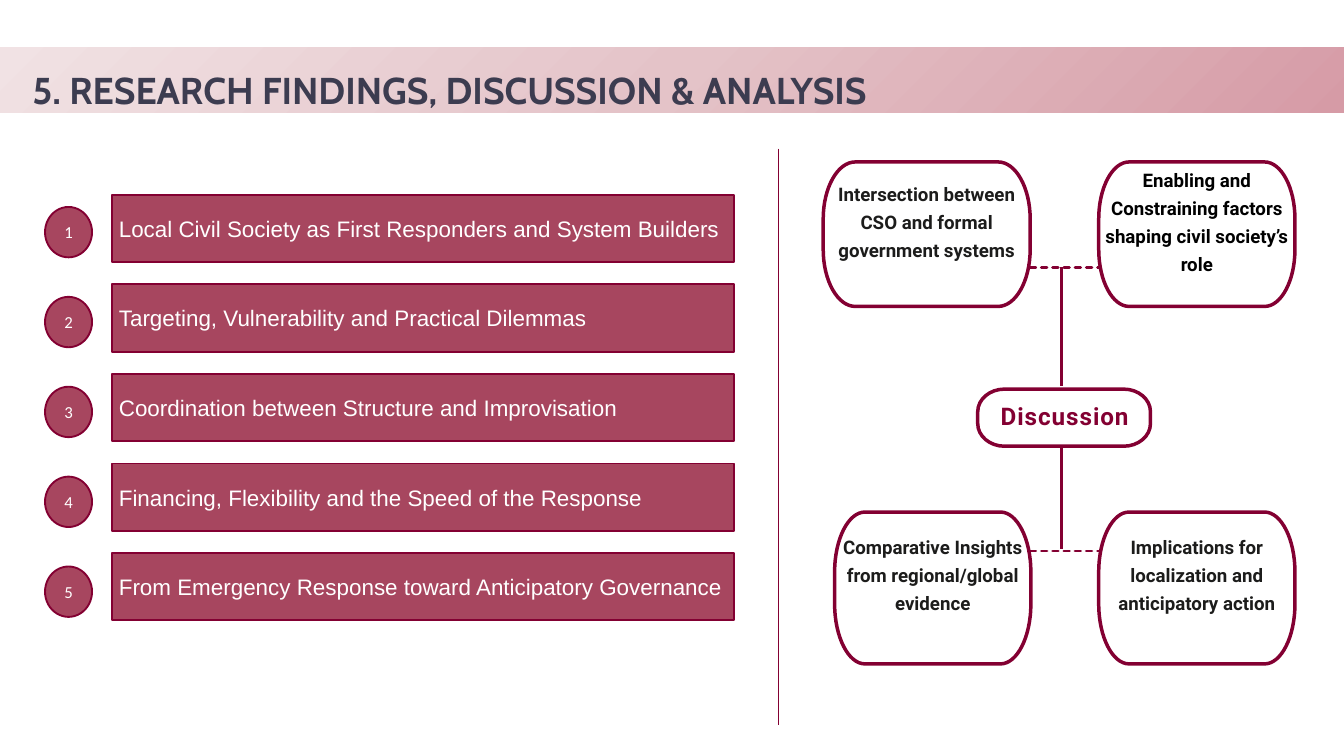
"""Build the research findings slide with five findings and a discussion map."""
from lxml import etree
from pptx import Presentation
from pptx import util as u
from pptx.dml.color import RGBColor
from pptx.enum import dml, shapes, text
from pptx.oxml.ns import qn

TITLE = "5. RESEARCH FINDINGS, DISCUSSION & ANALYSIS"
FINDINGS = [
    "Local Civil Society as First Responders and System Builders",
    "Targeting, Vulnerability and Practical Dilemmas",
    "Coordination between Structure and Improvisation",
    "Financing, Flexibility and the Speed of the Response",
    "From Emergency Response toward Anticipatory Governance",
]
HUB = ("Discussion", "wine", (14.55, 5.79, 2.57, 0.85), (14.56, 5.7, 2.57, 0.93))
ENABLING = ("Enabling and Constraining factors shaping civil society’s role", "black",
            (16.35, 2.41, 2.92, 2.15), (16.35, 1.97, 2.92, 2.59))
INTERSECTION = ("Intersection between CSO and formal government systems", "ink",
                (12.25, 2.41, 3.08, 2.15), (12.25, 1.97, 3.08, 2.59))
IMPLICATIONS = ("Implications for localization and anticipatory action", "ink",
                (16.35, 7.62, 2.92, 2.26), (16.35, 7.15, 2.92, 2.72))
COMPARATIVE = ("Comparative Insights from regional/global evidence", "ink",
               (12.42, 7.62, 2.92, 2.26), (12.42, 7.15, 2.92, 2.72))
DIVIDER = ((11.58, 2.21), (11.58, 10.79), 0.75, False)
TOP_LINK = ((15.33, 3.98), (16.35, 3.98), 3, True)
TOP_STEM = ((15.8, 3.98), (15.8, 5.75), 3, False)
LOW_LINK = ((15.33, 8.2), (16.35, 8.2), 3, True)
LOW_STEM = ((15.8, 6.64), (15.8, 8.17), 3, False)
THEME = {
    "color": {"wine": "830032", "rose": "A7465F", "white": "FFFFFF", "black": "000000", "ink": "1C1C1B",
              "title": "3C3C50"},
    "band": [(0, "D69BA6"), (50, "E4C3C8"), (100, "F1E2E4")],
    "type": {
        "title": {"name": "Cabin", "size": u.Pt(40), "bold": True},
        "finding": {"name": "Arial", "size": u.Pt(24)},
        "number": {"name": "Calibri", "size": u.Pt(18)},
        "card": {"name": "Roboto", "size": u.Pt(20), "bold": True},
        "hub": {"name": "Roboto", "size": u.Pt(26), "bold": True},
    },
}
BAR_TOPS, NUMBER_TOPS = (2.9, 8.23), (3.08, 8.43)
CORNER_X, CORNER_Y, PULL = 0.155, 0.395, 0.45


def color(name):
    return RGBColor.from_string(THEME["color"][name])


def assign(target, values):
    for name, value in values.items():
        setattr(target, name, value)


def inches(values):
    return [u.Inches(value) for value in values]


def spread(ends, count):
    first, last = ends
    return [first + index * (last - first) / (count - 1) for index in range(count)]


def write(box, words, style, ink, align, spacing=None, inset=None, **frame_values):
    frame = box.text_frame
    assign(frame, {"word_wrap": True, "vertical_anchor": text.MSO_ANCHOR.MIDDLE, **frame_values})
    if inset is not None:
        assign(frame, {f"margin_{side}": u.Inches(inset) for side in ("left", "top", "right", "bottom")})
    para = frame.paragraphs[0]
    para.alignment = align
    if spacing:
        para.line_spacing = u.Pt(spacing)
    span = para.add_run()
    span.text = words
    assign(span.font, THEME["type"][style])
    span.font.color.rgb = color(ink)
    return span


def outline(shape, width):
    shape.shadow.inherit = False
    shape.line.color.rgb = color("wine")
    shape.line.width = u.Pt(width)


def add_block(parent, place):
    left, top, width, height = place
    right, bottom = left + width, top + height
    builder = parent.shapes.build_freeform(*inches((right, bottom)))
    corners = [(left, bottom), (left, top), (right, top)]
    builder.add_line_segments([inches(corner) for corner in corners], close=True)
    block = builder.convert_to_shape()
    block.shadow.inherit = False
    return block


def add_band(page):
    band = add_block(page, (0, 0.7, 20, 0.98))
    band.line.fill.background()
    band.rotation = 180
    band.fill.gradient()
    gradient = band._element.spPr.find(qn("a:gradFill"))
    for child in list(gradient):
        gradient.remove(child)
    stops = etree.SubElement(gradient, qn("a:gsLst"))
    for position, tint in THEME["band"]:
        stop = etree.SubElement(stops, qn("a:gs"), pos=str(position * 1000))
        etree.SubElement(stop, qn("a:srgbClr"), val=tint)
    route = etree.SubElement(gradient, qn("a:path"), {"path": "circle"})
    etree.SubElement(route, qn("a:fillToRect"), l="100000", t="100000")


def add_badge(page, kind, place, words, style, align):
    badge = page.shapes.add_shape(kind, *inches(place))
    badge.fill.solid()
    badge.fill.fore_color.rgb = color("rose")
    outline(badge, 2)
    write(badge, words, style, "white", align)


def round_corners(shape):
    route = next(shape._element.iter(qn("a:path")))
    width, height = int(route.get("w")), int(route.get("h"))
    for child in list(route):
        route.remove(child)
    x, y, pull_x, pull_y = CORNER_X, CORNER_Y, CORNER_X * PULL, CORNER_Y * PULL
    steps = [
        ("moveTo", [(x, 0)]),
        ("lnTo", [(1 - x, 0)]),
        ("cubicBezTo", [(1 - pull_x, 0), (1, pull_y), (1, y)]),
        ("lnTo", [(1, 1 - y)]),
        ("cubicBezTo", [(1, 1 - pull_y), (1 - pull_x, 1), (1 - x, 1)]),
        ("lnTo", [(x, 1)]),
        ("cubicBezTo", [(pull_x, 1), (0, 1 - pull_y), (0, 1 - y)]),
        ("lnTo", [(0, y)]),
        ("cubicBezTo", [(0, pull_y), (pull_x, 0), (x, 0)]),
        ("close", []),
    ]
    for name, points in steps:
        step = etree.SubElement(route, qn(f"a:{name}"))
        for across, down in points:
            etree.SubElement(step, qn("a:pt"), x=str(round(across * width)), y=str(round(down * height)))


def add_card(page, card, style="card", spacing=30):
    words, ink, frame_place, text_place = card
    group = page.shapes.add_group_shape()
    frame = add_block(group, frame_place)
    round_corners(frame)
    frame.fill.background()
    outline(frame, 3.75)
    box = group.shapes.add_textbox(*inches(text_place))
    return write(box, words, style, ink, text.PP_ALIGN.CENTER, spacing, 0.06)


def add_line(page, start, end, width, dashed):
    line = page.shapes.add_connector(shapes.MSO_CONNECTOR.STRAIGHT, *inches(start + end))
    line.line.color.rgb = color("wine")
    line.line.width = u.Pt(width)
    if dashed:
        line.line.dash_style = dml.MSO_LINE.SQUARE_DOT
        line._element.spPr.find(qn("a:ln")).set("cap", "rnd")
    etree.SubElement(line._element.spPr, qn("a:effectLst"))


def main():
    deck = Presentation()
    assign(deck, {"slide_width": u.Inches(20), "slide_height": u.Inches(11.25)})
    page = deck.slides.add_slide(deck.slide_layouts[6])
    add_band(page)
    heading = page.shapes.add_textbox(*inches((0.48, 0.73, 18.85, 0.86)))
    write(heading, TITLE, "title", "title", text.PP_ALIGN.LEFT, 67.2, 0,
          vertical_anchor=text.MSO_ANCHOR.TOP, auto_size=text.MSO_AUTO_SIZE.SHAPE_TO_FIT_TEXT)
    count = len(FINDINGS)
    for finding, top in zip(FINDINGS, spread(BAR_TOPS, count)):
        add_badge(page, shapes.MSO_SHAPE.RECTANGLE, (1.67, top, 9.25, 1), finding, "finding", text.PP_ALIGN.LEFT)
    for number, top in enumerate(spread(NUMBER_TOPS, count), 1):
        add_badge(page, shapes.MSO_SHAPE.OVAL, (0.67, top, 0.7, 0.75), str(number), "number", text.PP_ALIGN.CENTER)
    add_line(page, *DIVIDER)
    label = add_card(page, HUB, "hub", 33.5)
    label.font._element.set("spc", "100")
    for link, cards, stem in ((TOP_LINK, (ENABLING, INTERSECTION), TOP_STEM),
                              (LOW_LINK, (IMPLICATIONS, COMPARATIVE), LOW_STEM)):
        add_line(page, *link)
        for card in cards:
            add_card(page, card)
        add_line(page, *stem)


    deck.save("out.pptx")


if __name__ == "__main__":
    main()
